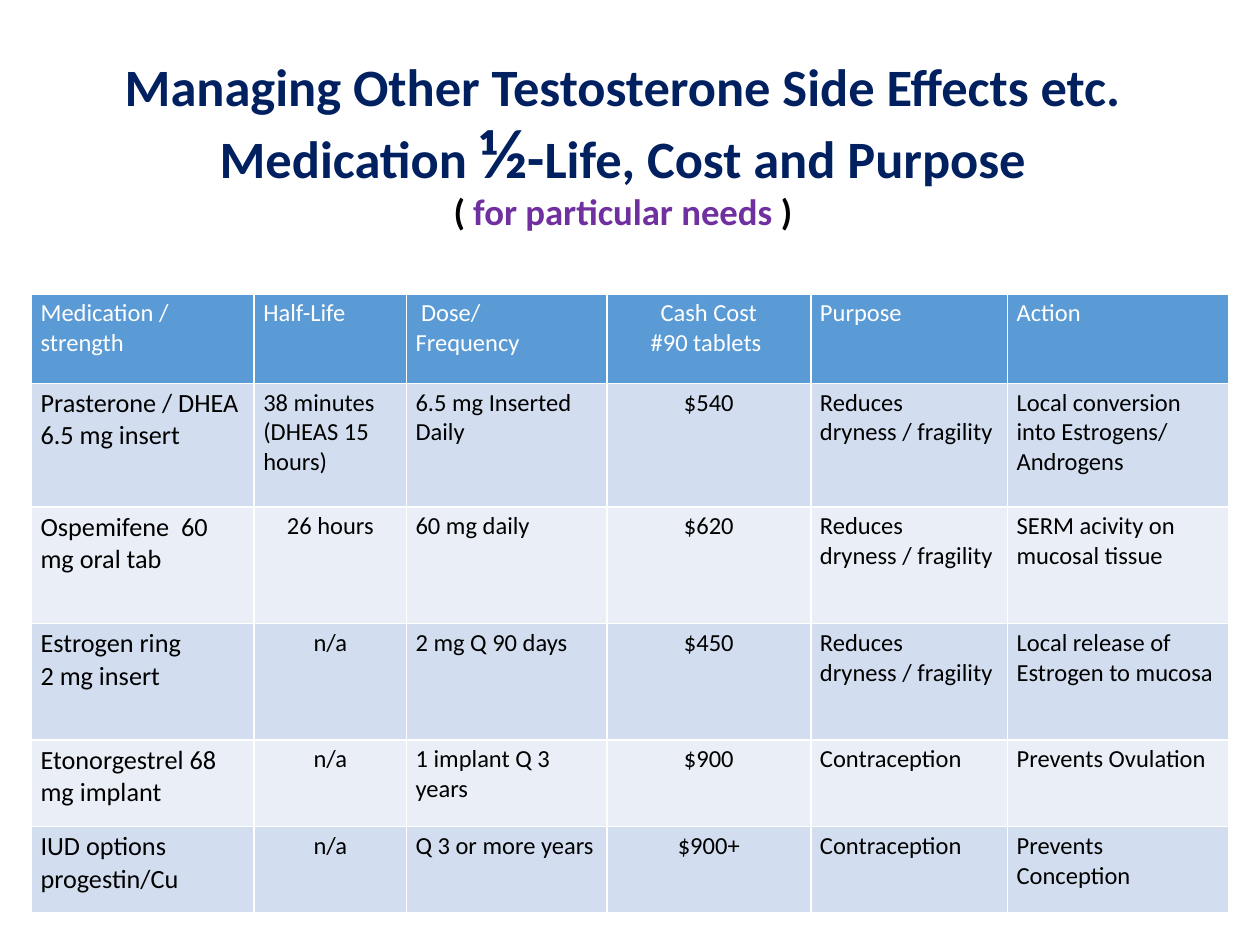
from pptx import Presentation
from pptx.dml.color import RGBColor
from pptx.enum.text import MSO_ANCHOR, MSO_AUTO_SIZE, PP_ALIGN
from pptx.util import Pt

FONT = "Calibri"
NAVY, PURPLE, BLACK, WHITE = "002060", "7030A0", "000000", "FFFFFF"
HEADER_FILL, BAND_FILLS = "5B9BD5", ("D2DEEF", "EAEFF7")

TITLE_LINES = [
    [("Managing Other Testosterone Side Effects etc.", 30, NAVY)],
    [("Medication ", 30, NAVY), ("½", 40, NAVY), ("-", 32, NAVY),
     ("Life, Cost and Purpose", 30, NAVY)],
    [("( ", 21, BLACK), ("for particular needs ", 21, PURPLE), (")", 21, BLACK)],
]
MEDICATIONS = [
    ("Medication / strength", "Half-Life", " Dose/\nFrequency",
     "Cash Cost\n#90 tablets ", "Purpose", "Action"),
    ("Prasterone / DHEA 6.5 mg insert", "38 minutes (DHEAS 15 hours)",
     "6.5 mg Inserted Daily", "$540", "Reduces dryness / fragility",
     "Local conversion into Estrogens/\nAndrogens"),
    ("Ospemifene  60 mg oral tab", "26 hours", "60 mg daily", "$620",
     "Reduces dryness / fragility", "SERM acivity on mucosal tissue"),
    ("Estrogen ring\n2 mg insert", "n/a", "2 mg Q 90 days", "$450",
     "Reduces dryness / fragility", "Local release of Estrogen to mucosa"),
    ("Etonorgestrel 68 mg implant", "n/a", "1 implant Q 3 years", "$900",
     "Contraception", "Prevents Ovulation"),
    ("IUD options progestin/Cu", "n/a", "Q 3 or more years", "$900+",
     "Contraception", "Prevents Conception"),
]
COLUMN_WIDTHS = [127.3, 87, 114.5, 116.6, 112.4, 126.2]
ROW_HEIGHTS = [51, 70.8, 66.5, 66.5, 49.5, 49.5]
HALF_LIFE, COST = 1, 3


def rgb(color):
    """Return a hex string as a colour."""
    return RGBColor.from_string(color)


def style_font(font, size, color, bold):
    """Apply the slide's typeface with a size, colour and weight."""
    font.name, font.size, font.bold = FONT, Pt(size), bold
    font.color.rgb = rgb(color)


def add_title(slide):
    """Write the heading into the title placeholder."""
    title = slide.shapes.title
    title.left, title.top, title.width, title.height = Pt(16), Pt(18), Pt(680), Pt(132)
    frame = title.text_frame
    frame.word_wrap, frame.auto_size = True, MSO_AUTO_SIZE.NONE
    frame.vertical_anchor = MSO_ANCHOR.MIDDLE
    heading = frame.paragraphs[0]
    heading.alignment, heading.line_spacing = PP_ALIGN.CENTER, 0.9
    for number, line in enumerate(TITLE_LINES):
        if number:
            heading.add_line_break()
        for text, size, color in line:
            run = heading.add_run()
            run.text = text
            style_font(run.font, size, color, True)


def is_centred(row, column):
    """Tell whether a cell holds a cost or a short half-life."""
    return column == COST or (column == HALF_LIFE and row > 1)


def add_medication_table(slide):
    """Add the banded table of medications."""
    table = slide.shapes.add_table(
        len(MEDICATIONS), len(COLUMN_WIDTHS), Pt(18), Pt(168),
        Pt(sum(COLUMN_WIDTHS)), Pt(sum(ROW_HEIGHTS))).table
    for column, width in zip(table.columns, COLUMN_WIDTHS):
        column.width = Pt(width)
    for r, (entries, height) in enumerate(zip(MEDICATIONS, ROW_HEIGHTS)):
        table.rows[r].height = Pt(height)
        fill = BAND_FILLS[(r - 1) % 2] if r else HEADER_FILL
        for c, entry in enumerate(entries):
            cell = table.cell(r, c)
            cell.fill.solid()
            cell.fill.fore_color.rgb = rgb(fill)
            cell.margin_left = cell.margin_right = Pt(5.2)
            cell.margin_top = cell.margin_bottom = Pt(2.6)
            cell.text = entry
            for paragraph in cell.text_frame.paragraphs:
                paragraph.alignment = PP_ALIGN.CENTER if is_centred(r, c) else PP_ALIGN.LEFT
                style_font(paragraph.font, 15 if r and c == 0 else 14,
                           BLACK if r else WHITE, False)


def main():
    """Build and save the slide."""
    deck = Presentation()
    deck.slide_width, deck.slide_height = Pt(720), Pt(540)
    slide = deck.slides.add_slide(deck.slide_layouts[5])
    add_title(slide)
    add_medication_table(slide)
    deck.save("out.pptx")


if __name__ == "__main__":
    main()
